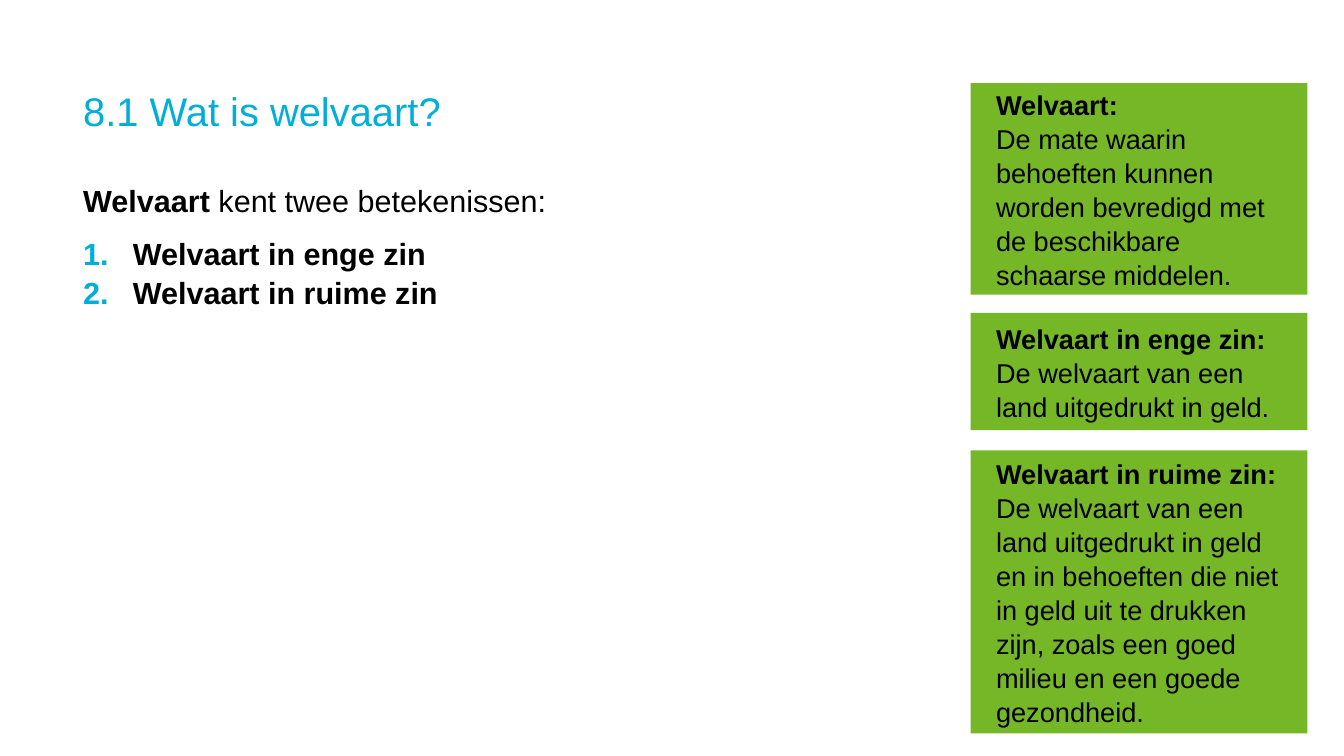
import pptx
import pptx.util
import pptx.dml.color
import pptx.enum.shapes
import pptx.enum.text
import pptx.oxml
import pptx.oxml.ns
from dataclasses import dataclass

Pt = pptx.util.Pt
RGB = pptx.dml.color.RGBColor.from_string
ANCHOR = pptx.enum.text.MSO_ANCHOR
ALIGN = pptx.enum.text.PP_ALIGN


@dataclass(frozen=True)
class Theme:
    font: str = "Arial"
    blue: str = "00AEDA"
    green: str = "76B728"
    black: str = "000000"
    title: float = 47
    body: float = 36
    term: float = 32
    lead: float = 1.04


THEME = Theme()

TERMS = [  # top, height, term, meaning
    (97.92, 249.12, "Welvaart:",
     "De mate waarin behoeften kunnen worden bevredigd met de "
     "beschikbare schaarse middelen."),
    (368.64, 138.24, "Welvaart in enge zin:",
     "De welvaart van een land uitgedrukt in geld."),
    (530.64, 333.36, "Welvaart in ruime zin:",
     "De welvaart van een land uitgedrukt in geld en in behoeften die niet "
     "in geld uit te drukken zijn, zoals een goed milieu en een goede "
     "gezondheid."),
]


def style(para, size, color=THEME.black, bold=False, lead=THEME.lead):
    para.alignment = ALIGN.LEFT
    para.line_spacing = lead
    font = para.font
    font.name, font.size, font.bold = THEME.font, Pt(size), bold
    font.color.rgb = RGB(color)


def setup(frame, side=0, edge=0, anchor=ANCHOR.TOP):
    frame.word_wrap = True
    frame.margin_left = frame.margin_right = Pt(side)
    frame.margin_top = frame.margin_bottom = Pt(edge)
    frame.vertical_anchor = anchor


def fill_lines(frame, lines):
    """Put one paragraph per line in the frame and return them."""
    frame.text = "\n".join(lines)
    return frame.paragraphs


def text_box(slide, box, anchor=ANCHOR.TOP):
    frame = slide.shapes.add_textbox(*map(Pt, box)).text_frame
    setup(frame, anchor=anchor)
    return frame


def number(para, indent):
    props = para._p.get_or_add_pPr()
    props.set("marL", str(Pt(indent)))
    props.set("indent", str(-Pt(indent)))
    space = pptx.oxml.ns.nsdecls("a")
    for xml in (
        f'<a:buClr {space}><a:srgbClr val="{THEME.blue}"/></a:buClr>',
        f'<a:buFont {space} typeface="{THEME.font}"/>',
        f'<a:buAutoNum {space} type="arabicPeriod"/>',
    ):
        props.append(pptx.oxml.parse_xml(xml))


# Heading
def add_title(slide, box):
    frame = text_box(slide, box, ANCHOR.MIDDLE)
    for para in fill_lines(frame, ["8.1 Wat is welvaart?"]):
        style(para, THEME.title, THEME.blue, lead=1)


# Lead sentence and numbered list
def add_body(slide, box):
    left, top, width, height = box
    intro = text_box(slide, (left, top, width, 42)).paragraphs[0]
    style(intro, THEME.body)
    intro.add_run().text = "Welvaart"
    intro.runs[0].font.bold = True
    intro.add_run().text = " kent twee betekenissen:"

    drop = 62.64
    frame = text_box(slide, (left, top + drop, width, height - drop))
    for para in fill_lines(frame, ["Welvaart in enge zin",
                                   "Welvaart in ruime zin"]):
        number(para, 58.5)
        style(para, THEME.body, bold=True)


# Green box with a term and its meaning
def add_term(slide, box, term, mean):
    shape = slide.shapes.add_shape(
        pptx.enum.shapes.MSO_SHAPE.RECTANGLE, *map(Pt, box))
    shape.shadow.inherit = False
    shape.fill.solid()
    shape.fill.fore_color.rgb = RGB(THEME.green)
    shape.line.fill.background()
    frame = shape.text_frame
    setup(frame, side=30, edge=9, anchor=ANCHOR.MIDDLE)
    head, text = fill_lines(frame, [term, mean])
    style(head, THEME.term, bold=True)
    style(text, THEME.term)


def main():
    deck = pptx.Presentation()
    deck.slide_width, deck.slide_height = Pt(1583.28), Pt(890.64)
    slide = deck.slides.add_slide(deck.slide_layouts[6])
    add_title(slide, (98, 98, 1386, 65.5))
    add_body(slide, (98, 213, 901.5, 157))
    for top, height, term, mean in TERMS:
        add_term(slide, (1143.36, top, 396.72, height), term, mean)
    deck.save("out.pptx")


if __name__ == "__main__":
    main()
